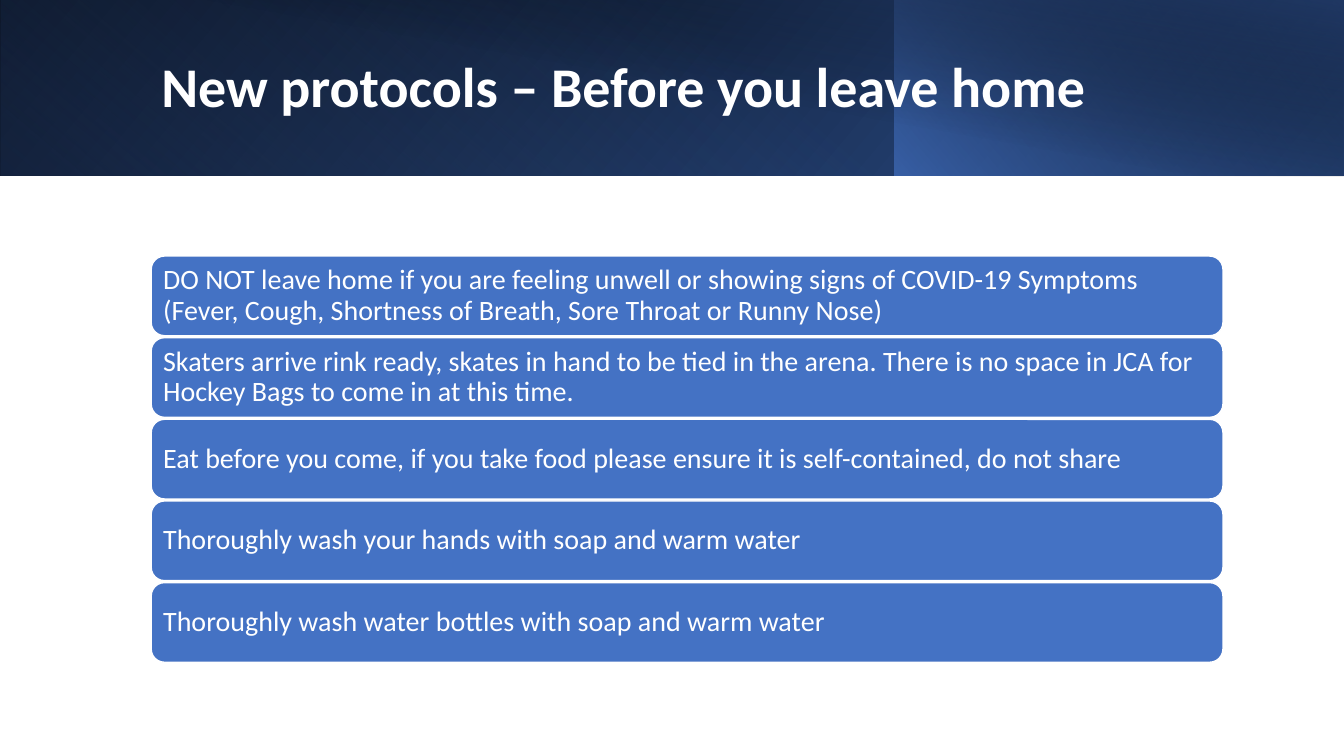
from dataclasses import dataclass

from lxml import etree
from pptx import Presentation
from pptx.dml.color import RGBColor
from pptx.enum import shapes, text
from pptx.oxml import ns
from pptx.util import Inches, Pt


@dataclass(frozen=True)
class Theme:
    font: str = "Calibri"
    white: str = "FFFFFF"
    black: str = "000000"
    blue: str = "4472C4"
    deep: str = "2F5597"
    navy: str = "203864"
    title: int = 40
    body: int = 20


THEME = Theme()

RULES = [
    "DO NOT leave home if you are feeling unwell or showing signs of COVID-19 Symptoms "
    "(Fever, Cough, Shortness of Breath, Sore Throat or Runny Nose)",
    "Skaters arrive rink ready, skates in hand to be tied in the arena. "
    "There is no space in JCA for Hockey Bags to come in at this time.",
    "Eat before you come, if you take food please ensure it is self-contained, do not share",
    "Thoroughly wash your hands with soap and warm water",
    "Thoroughly wash water bottles with soap and warm water",
]


def add_box(slide, kind, *box):
    shape = slide.shapes.add_shape(kind, *map(Inches, box))
    shape.shadow.inherit = False
    return shape


def add_band(slide, box, angle, stops, flip=True, turn=0):
    """Add a gradient band; stops are (position, colour, opacity) in percent."""
    band = add_box(slide, shapes.MSO_SHAPE.RECTANGLE, *box)
    band.line.fill.background()
    band.rotation = turn
    props = band._element.spPr
    if flip:
        props.xfrm.set("flipH", "1")
    band.fill.gradient()
    band.fill.gradient_angle = 360 - angle
    for stop, (place, color, _) in zip(band.fill.gradient_stops, stops):
        stop.position = place / 100
        stop.color.rgb = RGBColor.from_string(color)
    colors = props.iterfind(".//" + ns.qn("a:srgbClr"))
    for color, (_, _, alpha) in zip(colors, stops):
        if alpha < 100:
            etree.SubElement(color, ns.qn("a:alpha")).set("val", str(alpha * 1000))


def set_text(shape, words, size, bold=False):
    frame = shape.text_frame
    frame.text = words
    frame.word_wrap = True
    frame.vertical_anchor = text.MSO_ANCHOR.MIDDLE
    para = frame.paragraphs[0]
    para.alignment = text.PP_ALIGN.LEFT
    para.line_spacing = 0.9
    font = para.runs[0].font
    font.name, font.size, font.bold = THEME.font, Pt(size), bold
    font.color.rgb = RGBColor.from_string(THEME.white)


def add_title(slide, words):
    title = slide.shapes.title
    title.left, title.top = Inches(1.5), Inches(0.32)
    title.width, title.height = Inches(10.82), Inches(1.13)
    set_text(title, words, THEME.title, bold=True)
    # Bring the title in front of the header bands.
    slide.shapes._spTree.append(title._element)


def add_rule(slide, top, words):
    bar = add_box(slide, shapes.MSO_SHAPE.ROUNDED_RECTANGLE, 1.5, top, 10.63, 0.79)
    bar.fill.solid()
    bar.fill.fore_color.rgb = RGBColor.from_string(THEME.blue)
    bar.line.color.rgb = RGBColor.from_string(THEME.white)
    bar.line.width = Pt(1)
    set_text(bar, words, THEME.body)
    frame = bar.text_frame
    frame.margin_left = frame.margin_right = Inches(0.08)
    frame.margin_top = frame.margin_bottom = Inches(0.08)


def add_header(slide):
    add_band(slide, (0, 0, 13.33, 1.74), 140,
             [(0, THEME.black, 100), (100, THEME.deep, 100)])
    add_band(slide, (0, 0, 8.88, 1.74), 230,
             [(20, THEME.blue, 0), (100, THEME.navy, 55)], turn=180)
    add_band(slide, (8.87, 0, 4.46, 1.74), 220,
             [(0, THEME.blue, 66), (100, THEME.black, 30)])
    add_band(slide, (0.5, 0, 12.83, 1.75), 280,
             [(50, THEME.black, 0), (99, THEME.navy, 52)], flip=False)


def main():
    deck = Presentation()
    deck.slide_width, deck.slide_height = Inches(13.33), Inches(7.5)
    slide = deck.slides.add_slide(deck.slide_layouts[5])
    add_header(slide)
    add_title(slide, "New protocols – Before you leave home")
    for row, words in enumerate(RULES):
        add_rule(slide, 2.54 + row * 0.81, words)
    deck.save("out.pptx")


if __name__ == "__main__":
    main()
